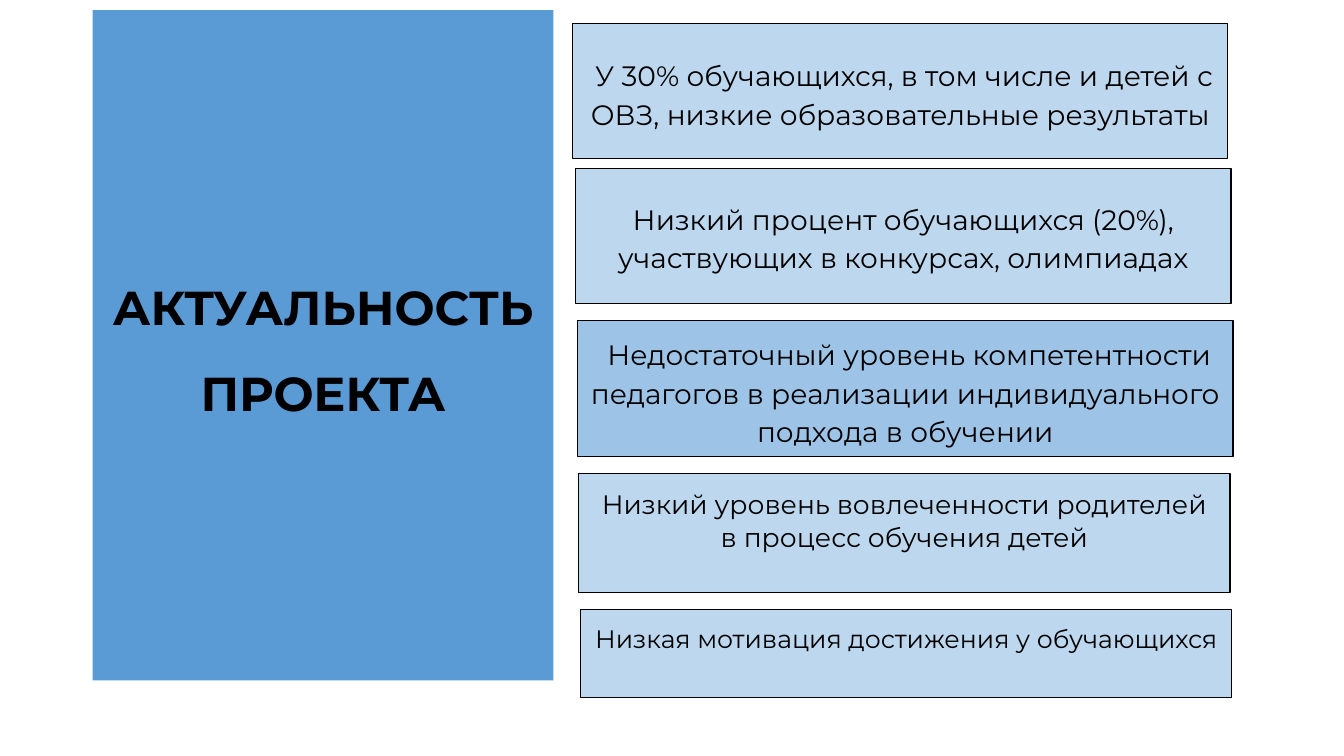
from dataclasses import dataclass

from pptx import Presentation
from pptx import util as u
from pptx.dml.color import RGBColor
from pptx.enum import shapes, text

BLACK, PALE, MID, STRONG = "000000", "BDD7EE", "9DC3E6", "5B9BD5"
MIDDLE, TOP = text.MSO_ANCHOR.MIDDLE, text.MSO_ANCHOR.TOP


@dataclass
class Panel:
    left: float
    top: float
    width: float
    height: float
    paragraphs: list[str]
    size: float = 20
    fill: str = PALE
    outlined: bool = True
    bold: bool = False
    anchor: text.MSO_ANCHOR = MIDDLE
    inset: float = 0.1
    line_spacing: float = 1.15


TITLE = Panel(0.92, 0.1, 4.57, 6.65, ["АКТУАЛЬНОСТЬ", "ПРОЕКТА"],
              size=34, fill=STRONG, outlined=False, bold=True)
TOP_TEXT = {"anchor": TOP, "inset": 0.12, "line_spacing": 1.05}
REASONS = [
    Panel(5.68, 0.23, 6.5, 1.34,
          [" У 30% обучающихся, в том числе и детей с ОВЗ, "
           "низкие образовательные результаты"]),
    Panel(5.71, 1.67, 6.5, 1.34,
          ["Низкий процент обучающихся (20%), участвующих в конкурсах, олимпиадах"]),
    Panel(5.73, 3.18, 6.5, 1.35,
          [" Недостаточный уровень компетентности педагогов "
           "в реализации индивидуального подхода в обучении"], fill=MID),
    Panel(5.74, 4.7, 6.46, 1.18,
          ["Низкий уровень вовлеченности родителей в процесс обучения детей"],
          size=19, **TOP_TEXT),
    Panel(5.76, 6.05, 6.46, 0.87,
          ["Низкая мотивация достижения у обучающихся"], size=18, **TOP_TEXT),
]


def rgb(value: str) -> RGBColor:
    return RGBColor.from_string(value)


def set_all(target, formats: dict) -> None:
    for name, value in formats.items():
        setattr(target, name, value)


def add_run(p, content: str, size: float, font: str, bold: bool) -> None:
    r = p.add_run()
    r.text = content
    set_all(r.font, {"name": font, "size": u.Pt(size), "bold": bold})
    r.font.color.rgb = rgb(BLACK)


def add_panel(s, panel: Panel) -> None:
    box = (panel.left, panel.top, panel.width, panel.height)
    sp = s.shapes.add_shape(shapes.MSO_SHAPE.RECTANGLE, *map(u.Inches, box))
    sp.shadow.inherit = False
    sp.fill.solid()
    sp.fill.fore_color.rgb = rgb(panel.fill)
    if panel.outlined:
        sp.line.color.rgb = rgb(BLACK)
        sp.line.width = u.Pt(0.75)
    else:
        sp.line.fill.background()

    tf = sp.text_frame
    inset = u.Inches(panel.inset)
    set_all(tf, {"word_wrap": True, "vertical_anchor": panel.anchor,
                 "margin_left": inset, "margin_right": inset,
                 "margin_top": inset, "margin_bottom": inset})
    for i, content in enumerate(panel.paragraphs):
        p = tf.add_paragraph() if i else tf.paragraphs[0]
        set_all(p, {"alignment": text.PP_ALIGN.CENTER,
                    "line_spacing": panel.line_spacing,
                    "space_after": u.Pt(15)})
        if content.startswith(" "):
            add_run(p, " ", 22, "Times New Roman", panel.bold)
        add_run(p, content.lstrip(), panel.size, "Montserrat", panel.bold)


def main() -> None:
    prs = Presentation()
    prs.slide_width, prs.slide_height = u.Inches(13.33), u.Inches(7.5)
    s = prs.slides.add_slide(prs.slide_layouts[6])
    for panel in [TITLE, *REASONS]:
        add_panel(s, panel)
    prs.save("out.pptx")


if __name__ == "__main__":
    main()
